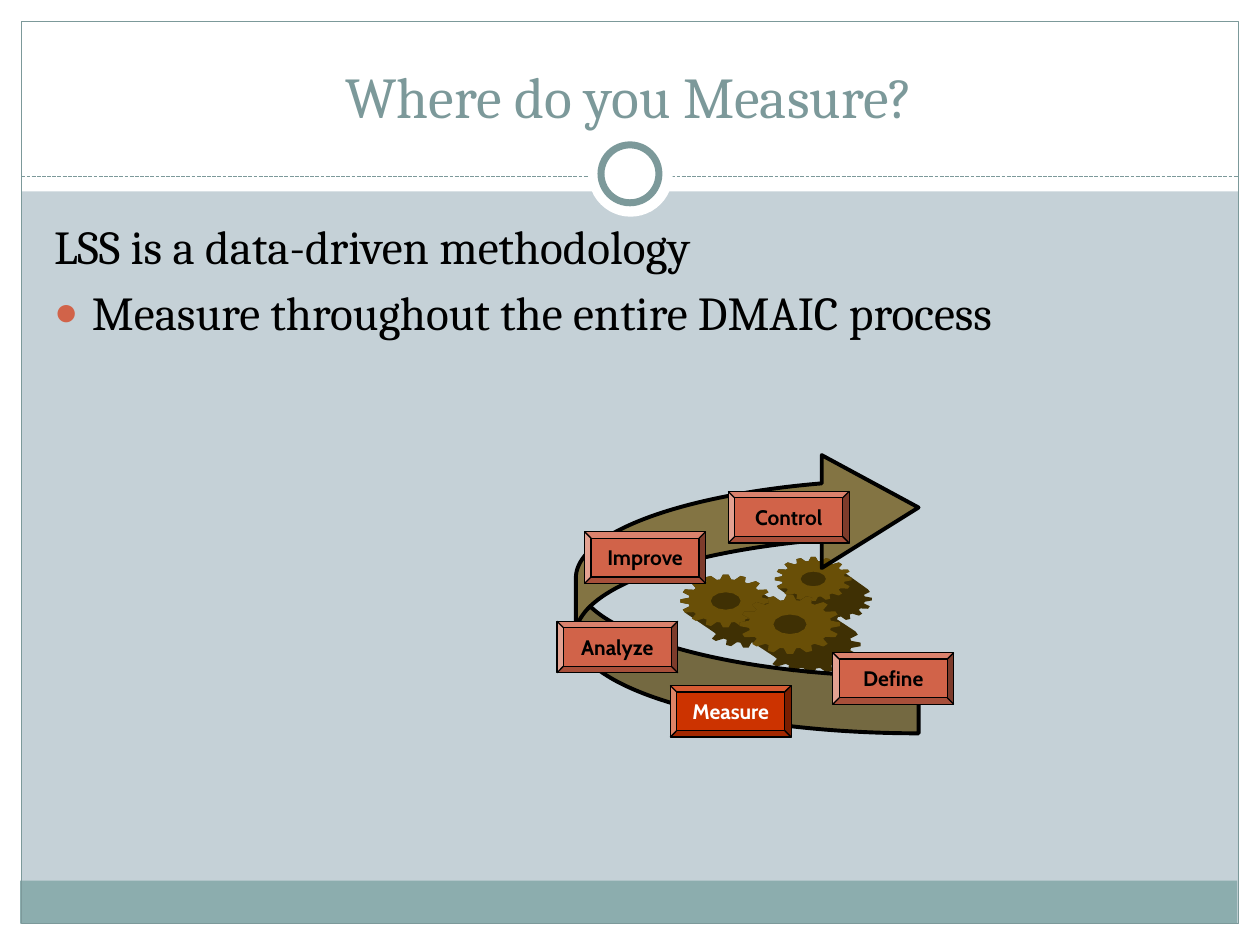
from dataclasses import dataclass
from math import cos, radians, sin

from lxml.etree import SubElement
from pptx import Presentation
from pptx.dml.color import RGBColor
from pptx.enum.dml import MSO_LINE
from pptx.enum.shapes import MSO_CONNECTOR, MSO_SHAPE
from pptx.enum.text import MSO_ANCHOR, MSO_AUTO_SIZE, PP_ALIGN
from pptx.oxml.ns import qn
from pptx.util import Inches, Pt


@dataclass(frozen=True)
class Theme:
    background: str = "C5D1D7"
    white: str = "FFFFFF"
    black: str = "000000"
    teal: str = "7C999A"
    footer: str = "8CADAE"
    accent: str = "D16349"
    highlight: str = "CC3300"
    gear: str = "694F07"
    gear_side: str = "3F3004"
    serif: str = "Cambria"
    sans: str = "Cabin"
    title_size: int = 33
    body_size: int = 27
    label_size: int = 12


def format_text(para, text, *, font, size, color, bold=False, align=None):
    """Add one formatted span of text to a paragraph."""
    span = para.add_run()
    span.text = text
    span.font.name, span.font.size, span.font.bold = font, Pt(size), bold
    span.font.color.rgb = RGBColor.from_string(color)
    para.alignment = align


class SlideBuilder:
    """Places elements on a grid of 100 columns by 75 rows."""

    COLUMNS, ROWS = 100, 75

    def __init__(self, deck, theme):
        self.theme = theme
        self.column = deck.slide_width / self.COLUMNS
        self.row = deck.slide_height / self.ROWS
        self.page = deck.slides.add_slide(deck.slide_layouts[1])
        self.page.background.fill.solid()
        self.page.background.fill.fore_color.rgb = RGBColor.from_string(theme.background)

    def point(self, column, row):
        return round(column * self.column), round(row * self.row)

    def paint(self, box, fill=None, line=None, weight=0.75):
        box.shadow.inherit = False
        if fill:
            box.fill.solid()
            box.fill.fore_color.rgb = RGBColor.from_string(fill)
        else:
            box.fill.background()
        if line:
            box.line.color.rgb = RGBColor.from_string(line)
            box.line.width = Pt(weight)
        else:
            box.line.fill.background()

    def shape(self, kind, left, top, width, height, adjustments=(), **style):
        box = self.page.shapes.add_shape(
            kind, *self.point(left, top), *self.point(width, height))
        for index, value in enumerate(adjustments):
            box.adjustments[index] = value
        self.paint(box, **style)
        return box

    def outline(self, *contours, **style):
        """Draw closed contours as one shape; a later contour cuts a hole."""
        first, *others = contours
        builder = self.page.shapes.build_freeform(*first[0])
        builder.add_line_segments(first[1:], close=True)
        for contour in others:
            builder.move_to(*contour[0])
            builder.add_line_segments(contour[1:], close=True)
        self.paint(builder.convert_to_shape(), **style)

    def dashed_line(self, left, right, row):
        line = self.page.shapes.add_connector(
            MSO_CONNECTOR.STRAIGHT, *self.point(left, row), *self.point(right, row))
        line.line.color.rgb = RGBColor.from_string(self.theme.teal)
        line.line.width = Pt(0.75)
        line.line.dash_style = MSO_LINE.SQUARE_DOT
        SubElement(line._element.spPr, qn("a:effectLst"))

    def placeholder(self, index, left, top, width, height, anchor):
        box = self.page.placeholders[index]
        box.left, box.top = self.point(left, top)
        box.width, box.height = self.point(width, height)
        box.text_frame.auto_size = MSO_AUTO_SIZE.NONE
        box.text_frame.vertical_anchor = anchor
        self.page.shapes._spTree.append(box._element)  # in front of the frame
        return box.text_frame

    def title(self, text, *place):
        frame = self.placeholder(0, *place, anchor=MSO_ANCHOR.BOTTOM)
        format_text(frame.paragraphs[0], text, font=self.theme.serif,
                    size=self.theme.title_size, color=self.theme.teal,
                    align=PP_ALIGN.CENTER)

    def body(self, lines, *place):
        frame = self.placeholder(1, *place, anchor=MSO_ANCHOR.TOP)
        for index, (text, bulleted) in enumerate(lines):
            para = frame.add_paragraph() if index else frame.paragraphs[0]
            format_text(para, text, font=self.theme.serif,
                        size=self.theme.body_size, color=self.theme.black)
            self.bullet(para, bulleted)

    def bullet(self, para, visible):
        properties = para._p.get_or_add_pPr()
        indent = Inches(0.3) if visible else 0
        properties.set("marL", str(indent))
        properties.set("indent", str(-indent))
        spacing = SubElement(properties, qn("a:spcBef"))
        SubElement(spacing, qn("a:spcPct"), val="20000")
        if not visible:
            SubElement(properties, qn("a:buNone"))
            return
        color = SubElement(properties, qn("a:buClr"))
        SubElement(color, qn("a:srgbClr"), val=self.theme.accent)
        SubElement(properties, qn("a:buSzPct"), val="85000")
        SubElement(properties, qn("a:buChar"), char="●")

    def gear(self, middle, center, width, height, teeth=16, depth=1.6):
        """Draw a toothed face over a side swept towards the lower right."""
        def place(angle, reach, shift=0):
            return self.point(middle + shift + width / 2 * reach * cos(radians(angle)),
                              center + shift + height / 2 * reach * sin(radians(angle)))

        def swept(angle):
            faces_sweep = cos(radians(angle)) / width + sin(radians(angle)) / height > 0
            return depth if faces_sweep else 0

        tooth = ((-8.5, 0.82), (-3.5, 1), (3.5, 1), (8.5, 0.82))
        rim = [(360 / teeth * number + turn, reach)
               for number in range(teeth) for turn, reach in tooth]
        side = [place(angle, reach, swept(angle)) for angle, reach in rim]
        face = [place(angle, reach) for angle, reach in rim]
        hole = [place(-angle, 0.33) for angle in range(0, 360, 30)]
        self.outline(side, fill=self.theme.gear_side)
        self.outline(face, hole, fill=self.theme.gear)

    def cycle_arrow(self, *place):
        arrow = self.shape(MSO_SHAPE.CURVED_DOWN_ARROW, *place, (0.2, 0.4, 0.343),
                           fill=self.theme.gear, line=self.theme.black, weight=2.25)
        arrow.rotation = 270
        color = arrow._element.spPr.find(qn("a:solidFill"))[0]
        SubElement(color, qn("a:alpha"), val="71000")

    def step(self, text, left, top, active=False):
        theme = self.theme
        box = self.shape(MSO_SHAPE.BEVEL, left, top, 9.6, 4.1, (0.125,),
                         fill=theme.highlight if active else theme.accent,
                         line=theme.black)
        frame = box.text_frame
        frame.word_wrap = False
        frame.vertical_anchor = MSO_ANCHOR.MIDDLE
        format_text(frame.paragraphs[0], text, font=theme.sans, size=theme.label_size,
                    color=theme.white if active else theme.black,
                    bold=True, align=PP_ALIGN.CENTER)


def main():
    theme = Theme()
    deck = Presentation()
    deck.slide_width, deck.slide_height = Inches(10), Inches(7.5)
    slide = SlideBuilder(deck, theme)

    # White margins, footer band and frame
    for place in ((0, 73.3, 100, 1.7), (0, 0, 100, 15.2),
                  (0, 0, 1.7, 75), (98.3, 0, 1.7, 75)):
        slide.shape(MSO_SHAPE.RECTANGLE, *place, fill=theme.white)
    slide.shape(MSO_SHAPE.RECTANGLE, 1.6, 69.9, 96.6, 3.4, fill=theme.footer)
    slide.shape(MSO_SHAPE.RECTANGLE, 1.7, 1.7, 96.6, 71.6, line=theme.teal)

    # Divider with ring
    slide.dashed_line(1.7, 98.3, 14)
    slide.shape(MSO_SHAPE.OVAL, 46.7, 10.5, 6.7, 6.7, fill=theme.white)
    slide.shape(MSO_SHAPE.OVAL, 47.7, 11.5, 4.6, 4.6,
                fill=theme.white, line=theme.teal, weight=4)

    # Title and list
    slide.title("Where do you Measure?", 3.3, 2.5, 93.3, 8.3)
    slide.body([("LSS is a data-driven methodology", False),
                ("Measure throughout the entire DMAIC process", True)],
               3.3, 16.7, 93, 50)

    # Gears inside the cycle arrow
    for gear in ((64.55, 45.95, 6.1, 3.5), (57.6, 47.7, 7.2, 4.2),
                 (62.7, 49.55, 8, 4.7)):
        slide.gear(*gear)
    slide.cycle_arrow(48.1, 33.4, 22.4, 27.2)

    # Process steps
    slide.step("Measure", 53.2, 54.4, active=True)
    for text, left, top in (("Control", 57.8, 39), ("Analyze", 44.2, 49.3),
                            ("Improve", 46.4, 42.2), ("Define", 66.1, 51.8)):
        slide.step(text, left, top)

    deck.save("out.pptx")


if __name__ == "__main__":
    main()
